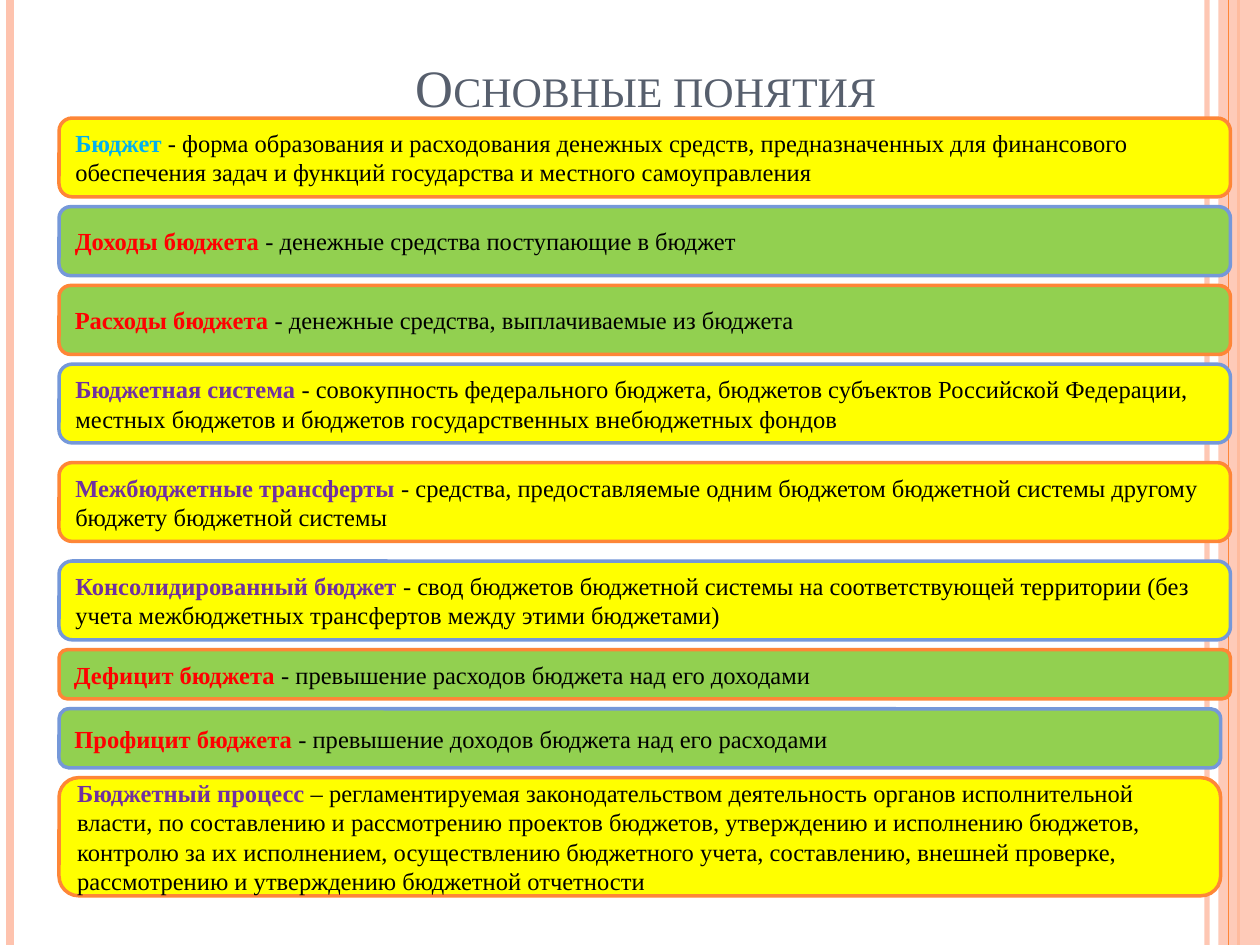
from typing import NamedTuple

from lxml.etree import SubElement
from pptx import Presentation
from pptx.dml.color import RGBColor
from pptx.enum.shapes import MSO_CONNECTOR as Link, MSO_SHAPE as Form
from pptx.enum.text import MSO_ANCHOR as Anchor, PP_ALIGN as Align
from pptx.oxml.ns import qn
from pptx.util import Inches, Pt

WIDE, HIGH = Inches(10), Inches(7.5)
UNIT = HIGH / 96
LEFT = 6
FONT = "Times New Roman"

PEACH = RGBColor(0xFE, 0xC3, 0xAE)
ORANGE = RGBColor(0xFE, 0x86, 0x37)
BLUE = RGBColor(0x75, 0x98, 0xD9)
YELLOW = RGBColor(0xFF, 0xFF, 0x00)
GREEN = RGBColor(0x92, 0xD0, 0x50)
SKY = RGBColor(0x00, 0xB0, 0xF0)
RED = RGBColor(0xFF, 0x00, 0x00)
PURPLE = RGBColor(0x70, 0x30, 0xA0)
BLACK = RGBColor(0x00, 0x00, 0x00)
SLATE = RGBColor(0x57, 0x5F, 0x6D)


class Stripe(NamedTuple):
    share: float
    color: RGBColor
    weight: float
    alpha: int = 100


class Entry(NamedTuple):
    row: int
    rows: int
    cols: int
    fill: RGBColor
    hue: RGBColor
    term: str
    gloss: str


BACK = [
    Stripe(0.958, PEACH, 3, 93),
    Stripe(0.008, PEACH, 4.5),
    Stripe(0.983, ORANGE, 1.5),
]
FRONT = Stripe(0.975, ORANGE, 0.75)

ENTRIES = [
    Entry(12, 8, 119, YELLOW, SKY, "Бюджет",
          " - форма образования и расходования денежных средств, предназначенных "
          "для финансового обеспечения задач и функций государства и местного "
          "самоуправления"),
    Entry(21, 7, 119, GREEN, RED, "Доходы бюджета ",
          "- денежные средства поступающие в бюджет"),
    Entry(29, 7, 119, GREEN, RED, "Расходы бюджета ",
          "- денежные средства, выплачиваемые из бюджета"),
    Entry(37, 8, 119, YELLOW, PURPLE, "Бюджетная система ",
          "- совокупность федерального бюджета, бюджетов субъектов Российской "
          "Федерации, местных бюджетов и бюджетов государственных внебюджетных "
          "фондов"),
    Entry(47, 8, 119, YELLOW, PURPLE, "Межбюджетные трансферты",
          " - средства, предоставляемые одним бюджетом бюджетной системы другому "
          "бюджету бюджетной системы"),
    Entry(57, 8, 119, YELLOW, PURPLE, "Консолидированный бюджет ",
          "- свод бюджетов бюджетной системы на соответствующей территории (без "
          "учета межбюджетных трансфертов между этими бюджетами)"),
    Entry(66, 5, 119, GREEN, RED, "Дефицит бюджета ",
          "- превышение расходов бюджета над его доходами"),
    Entry(72, 6, 118, GREEN, RED, "Профицит бюджета ",
          "- превышение доходов бюджета над его расходами"),
    Entry(79, 12, 118, YELLOW, PURPLE, "Бюджетный процесс ",
          "– регламентируемая законодательством деятельность органов "
          "исполнительной власти, по составлению и рассмотрению проектов бюджетов, "
          "утверждению и исполнению бюджетов, контролю за их исполнением, "
          "осуществлению бюджетного учета, составлению, внешней проверке, "
          "рассмотрению и утверждению бюджетной отчетности"),
]


def fade(shape, alpha: int) -> None:
    tint = next(shape._element.spPr.iter(qn("a:srgbClr")))
    SubElement(tint, qn("a:alpha")).set("val", str(alpha * 1000))


def style(run, size: float, color: RGBColor, bold: bool = False) -> None:
    run.font.name = FONT
    run.font.size = Pt(size)
    run.font.bold = bold
    run.font.color.rgb = color


def draw_stripe(slide, stripe: Stripe) -> None:
    left = round(WIDE * stripe.share)
    line = slide.shapes.add_connector(Link.STRAIGHT, left, 0, left, HIGH)
    line.line.color.rgb = stripe.color
    line.line.width = Pt(stripe.weight)
    if stripe.alpha < 100:
        fade(line, stripe.alpha)
    SubElement(line._element.spPr, qn("a:effectLst"))


def draw_band(slide) -> None:
    left = round(WIDE * 0.967)
    band = slide.shapes.add_shape(Form.RECTANGLE, left, 0, WIDE - left, HIGH)
    band.shadow.inherit = False
    band.fill.solid()
    band.fill.fore_color.rgb = PEACH
    fade(band, 87)
    band.line.fill.background()


def draw_title(slide, text: str) -> None:
    box = slide.shapes.add_textbox(Inches(0.5), Inches(0.18), Inches(9.25), Inches(0.81))
    frame = box.text_frame
    frame.word_wrap = True
    frame.vertical_anchor = Anchor.BOTTOM
    frame.text = text
    para = frame.paragraphs[0]
    para.alignment = Align.CENTER
    run = para.runs[0]
    style(run, 30, SLATE)
    run._r.get_or_add_rPr().set("cap", "small")


def draw_entry(slide, entry: Entry, edge: RGBColor) -> None:
    place = [round(n * UNIT) for n in (LEFT, entry.row, entry.cols, entry.rows)]
    card = slide.shapes.add_shape(Form.ROUNDED_RECTANGLE, *place)
    card.shadow.inherit = False
    card.fill.solid()
    card.fill.fore_color.rgb = entry.fill
    card.line.color.rgb = edge
    card.line.width = Pt(2)
    frame = card.text_frame
    frame.word_wrap = True
    frame.vertical_anchor = Anchor.MIDDLE
    frame.text = entry.term
    para = frame.paragraphs[0]
    para.alignment = Align.LEFT
    style(para.runs[0], 14, entry.hue, True)
    gloss = para.add_run()
    gloss.text = entry.gloss
    style(gloss, 14, BLACK)


def main() -> None:
    deck = Presentation()
    deck.slide_width, deck.slide_height = WIDE, HIGH
    slide = deck.slides.add_slide(deck.slide_layouts[6])
    for stripe in BACK:
        draw_stripe(slide, stripe)
    draw_band(slide)
    draw_stripe(slide, FRONT)
    draw_title(slide, "Основные понятия")
    for i, entry in enumerate(ENTRIES):
        draw_entry(slide, entry, BLUE if i % 2 else ORANGE)
    deck.save("out.pptx")


if __name__ == "__main__":
    main()
